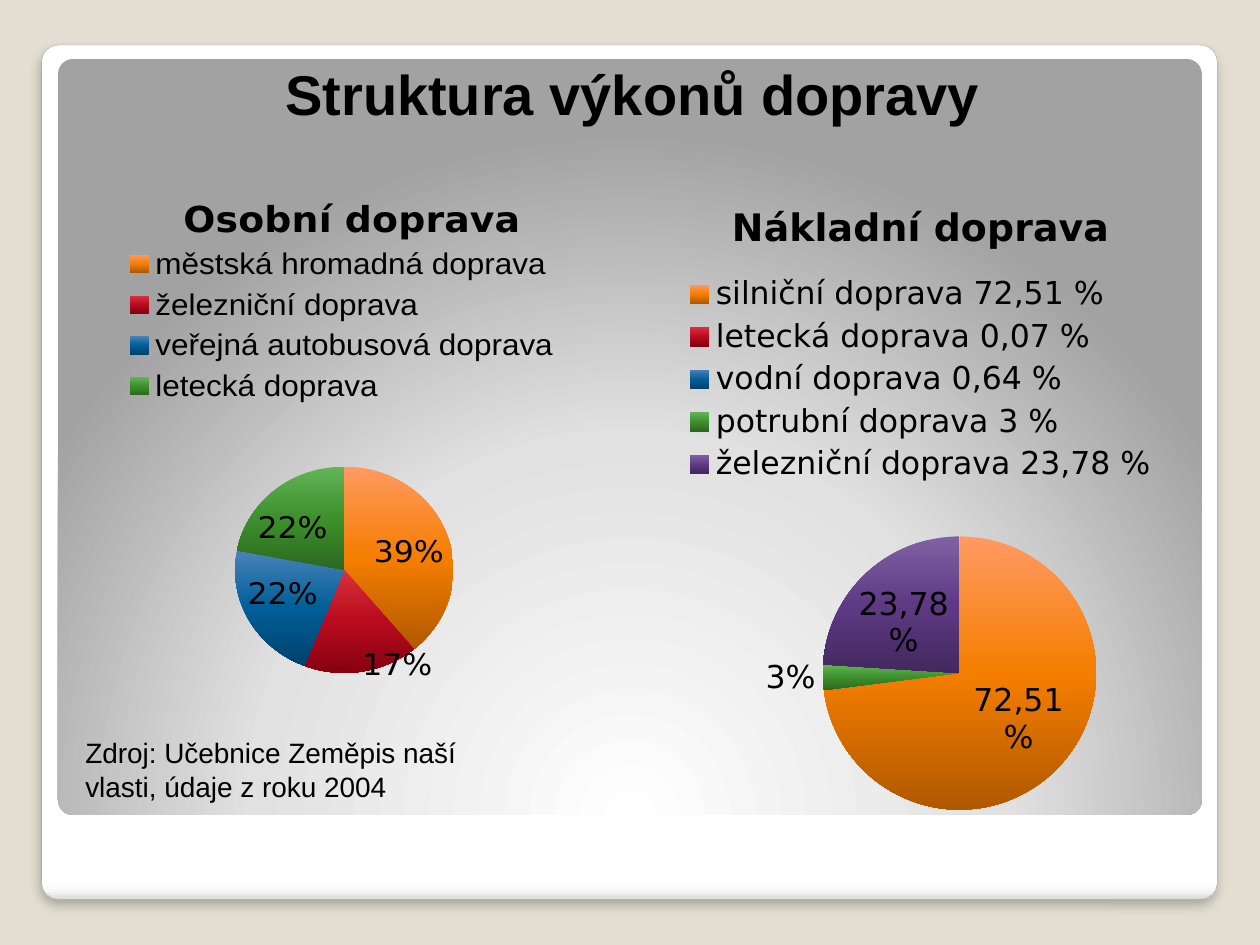
import pptx
import pptx.util
import pptx.chart.data
import pptx.enum.chart
import pptx.enum.shapes
import pptx.enum.text
import pptx.oxml
import pptx.oxml.ns
from pptx.dml.color import RGBColor

Cm, Pt = pptx.util.Cm, pptx.util.Pt
BLACK = RGBColor(0, 0, 0)
SAND = RGBColor(0xE3, 0xDE, 0xD1)
EDGE = RGBColor(0xA4, 0xA4, 0xA4)
SANS, DEJA = "Arial", "DejaVu Sans"

# Content
TITLE = "Struktura výkonů dopravy"
SOURCE = "Zdroj: Učebnice Zeměpis naší\vvlasti, údaje z roku 2004"
PIES = [
    dict(title="Osobní doprava", box=(1.07, 3.38, 11.86, 11),
         items=[("městská hromadná doprava", 39), ("železniční doprava", 17),
                ("veřejná autobusová doprava", 22), ("letecká doprava", 22)],
         labels={}, hide=[], font=SANS,
         head=(0.21, 0.04), key=(0.12, 0.14, 0.74, 0.33),
         plot=(0.09, 0.58, 0.81, 0.4)),
    dict(title="Nákladní doprava", box=(11.86, 3.38, 13.13, 13.77),
         items=[("silniční doprava 72,51 %", 73), ("letecká doprava 0,07 %", 0),
                ("vodní doprava 0,64 %", 0), ("potrubní doprava 3 %", 3),
                ("železniční doprava 23,78 %", 24)],
         labels={0: "72,51%", 1: "0,07%", 4: "23,78%"}, hide=[2], font=DEJA,
         head=(0.21, 0.04), key=(0.14, 0.15, 0.74, 0.32),
         plot=(0.18, 0.54, 0.78, 0.4)),
]
# Top, middle and bottom shade of each slice
SHADES = [("FF9A62", "F57E00", "B05800"), ("D8303C", "B80C1E", "850010"),
          ("4A82B8", "005E98", "00426C"), ("62B456", "3D902C", "2C6820"),
          ("8062A4", "5E3A84", "43285E")]
CARD = [(0, "FFFFFF"), (98, "FFFFFF"), (99, "F7F7F7"), (100, "DADADA")]
PANEL = [(0, "FFFFFF"), (55, "E1E1E1"), (100, "A2A2A2")]
DOWN = '<a:lin ang="5400000" scaled="0"/>'
GLOW = ('<a:path path="circle"><a:fillToRect l="50000" t="175000" '
        'r="50000" b="-75000"/></a:path>')
SHADOW = ('<a:effectLst %s><a:outerShdw blurRad="76200" dist="50800" dir="5400000">'
          '<a:srgbClr val="000000"><a:alpha val="25000"/></a:srgbClr>'
          '</a:outerShdw></a:effectLst>')


def xml(text):
    return pptx.oxml.parse_xml(text % pptx.oxml.ns.nsdecls("a", "c"))


def grade(fill, stops, way):
    """Fill with a gradient of any number of stops."""
    fill.gradient()
    props = fill._xPr
    old = props.find(pptx.oxml.ns.qn("a:gradFill"))
    marks = "".join(f'<a:gs pos="{at * 1000}"><a:srgbClr val="{tone}"/></a:gs>'
                    for at, tone in stops)
    props.replace(old, xml("<a:gradFill %s><a:gsLst>" + marks + "</a:gsLst>"
                           + way + "</a:gradFill>"))


def style(font, size, name, bold=False):
    font.size, font.name, font.bold = Pt(size), name, bold
    font.color.rgb = BLACK


def place(node, spots, inner=False):
    """Give a chart part a fixed place, as shares of the chart."""
    tags = ['<c:layoutTarget val="inner"/>'] if inner else []
    tags += [f'<c:{axis}Mode val="edge"/>' for axis in "xy"]
    tags += [f'<c:{axis} val="{spot}"/>' for axis, spot in zip("xywh", spots)]
    for old in node.findall(pptx.oxml.ns.qn("c:layout")):
        node.remove(old)
    lay = xml("<c:layout %s><c:manualLayout>" + "".join(tags)
              + "</c:manualLayout></c:layout>")
    lead = ("c:tx", "c:legendPos", "c:legendEntry")
    names = [pptx.oxml.ns.qn(tag) for tag in lead]
    node.insert(sum(child.tag in names for child in node), lay)


def frame(box, stops, way):
    shape = slide.shapes.add_shape(pptx.enum.shapes.MSO_SHAPE.ROUNDED_RECTANGLE,
                                   *map(Cm, box))
    shape.adjustments[0] = 0.02
    shape.shadow.inherit = False
    grade(shape.fill, stops, way)
    shape.line.fill.background()
    return shape


def write(box, text, size, bold=False):
    area = slide.shapes.add_textbox(*map(Cm, box)).text_frame
    area.word_wrap = True
    area.text = text
    for run in area.paragraphs[0].runs:
        style(run.font, size, SANS, bold)
    return area


def draw(pie):
    data = pptx.chart.data.CategoryChartData()
    data.categories = [name for name, _ in pie["items"]]
    data.add_series(pie["title"], [share for _, share in pie["items"]])
    chart = slide.shapes.add_chart(pptx.enum.chart.XL_CHART_TYPE.PIE,
                                   *map(Cm, pie["box"]), data).chart
    style(chart.font, 18, DEJA)
    # Heading and legend
    chart.has_title = chart.has_legend = True
    head = chart.chart_title.text_frame
    head.text = pie["title"]
    style(head.paragraphs[0].runs[0].font, 21.6, DEJA, True)
    place(chart.chart_title._element, pie["head"])
    chart.legend.position = pptx.enum.chart.XL_LEGEND_POSITION.TOP
    chart.legend.include_in_layout = False
    style(chart.legend.font, 18, pie["font"])
    place(chart.legend._element, pie["key"])
    # Slices
    plot = chart.plots[0]
    plot.vary_by_categories = True
    place(chart._chartSpace.chart.plotArea, pie["plot"], True)
    row = plot.series[0]
    for i in range(len(pie["items"])):
        grade(row.points[i].format.fill, list(zip((0, 50, 100), SHADES[i])), DOWN)
    # Labels
    tags = row.data_labels
    tags.show_percentage, tags.show_value = True, False
    tags.number_format, tags.number_format_is_linked = "0%", False
    style(tags.font, 18, DEJA)
    for i, text in pie["labels"].items():
        label = row.points[i].data_label.text_frame
        label.text = text
        style(label.paragraphs[0].runs[0].font, 18, DEJA)
    for i in pie["hide"]:
        gone = xml(f'<c:dLbl %s><c:idx val="{i}"/><c:delete val="1"/></c:dLbl>')
        tags._element.insert(sum(at < i for at in pie["labels"]), gone)


deck = pptx.Presentation()
deck.slide_width, deck.slide_height = Cm(25.4), Cm(19.05)
slide = deck.slides.add_slide(deck.slide_layouts[6])
slide.background.fill.solid()
slide.background.fill.fore_color.rgb = SAND

# Card and panel
card = frame((0.84, 0.91, 23.7, 17.22), CARD, DOWN)
card.line.color.rgb, card.line.width = EDGE, Pt(0.16)
props = card._element.spPr
props.replace(props.find(pptx.oxml.ns.qn("a:effectLst")), xml(SHADOW))
frame((1.17, 1.19, 23.06, 15.24), PANEL, GLOW)

# Title, pies and source
title = write((3, 0.99, 19.51, 1.7), TITLE, 32, True)
title.vertical_anchor = pptx.enum.text.MSO_ANCHOR.BOTTOM
title.paragraphs[0].alignment = pptx.enum.text.PP_ALIGN.CENTER
for pie in PIES:
    draw(pie)
write((1.47, 14.71, 9, 1.63), SOURCE, 16)

deck.save("out.pptx")
